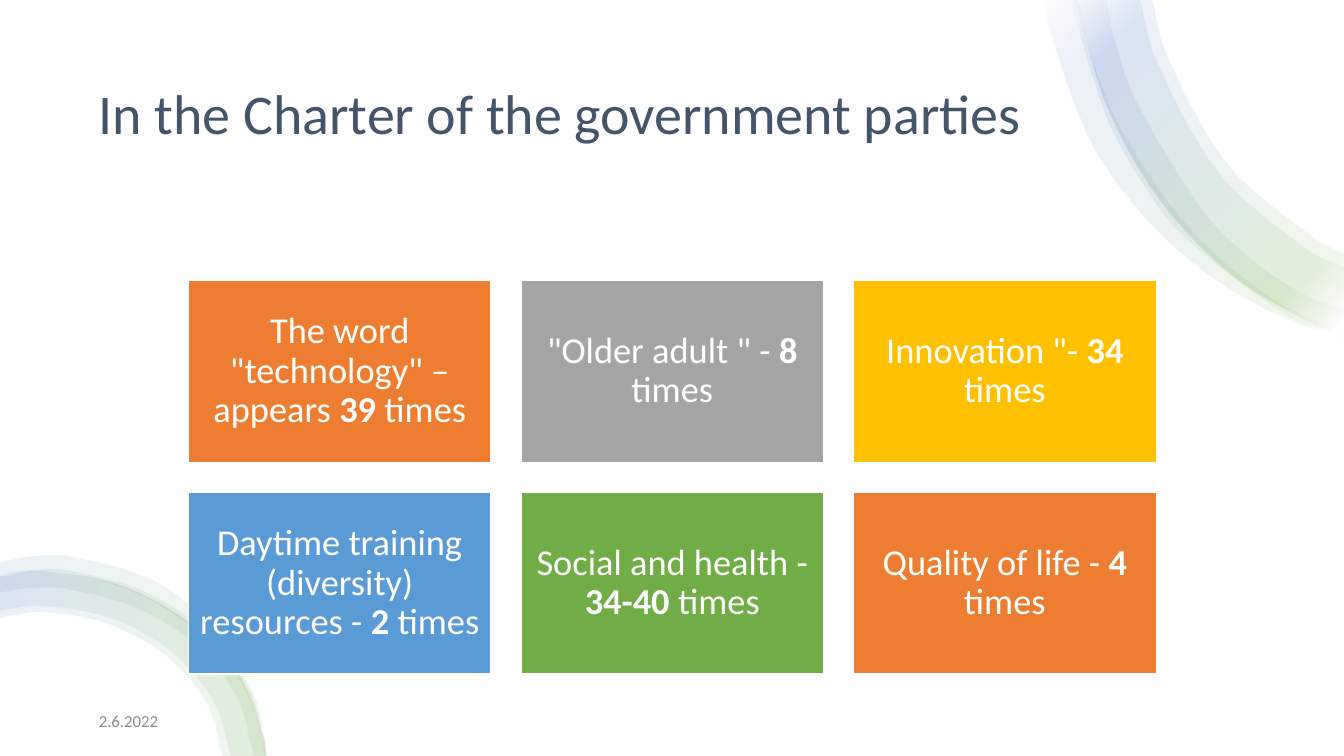
from math import dist

from lxml import etree
from pptx import Presentation
from pptx.dml.color import RGBColor
from pptx.enum.shapes import MSO_SHAPE
from pptx.enum.text import MSO_ANCHOR, PP_ALIGN
from pptx.oxml.ns import qn
from pptx.util import Cm, Pt

RECT = MSO_SHAPE.RECTANGLE
MIDDLE = MSO_ANCHOR.MIDDLE
LEFT, CENTER = PP_ALIGN.LEFT, PP_ALIGN.CENTER
FONT = "Calibri"

WHITE = RGBColor(0xFF, 0xFF, 0xFF)
NAVY = RGBColor(0x44, 0x54, 0x6A)
DIM = RGBColor(0x8C, 0x8C, 0x8C)
ORANGE = RGBColor(0xED, 0x7D, 0x31)
GRAY = RGBColor(0xA5, 0xA5, 0xA5)
GOLD = RGBColor(0xFF, 0xC0, 0x00)
SKY = RGBColor(0x5B, 0x9B, 0xD5)
GREEN = RGBColor(0x70, 0xAD, 0x47)
BLUE = RGBColor(0x44, 0x72, 0xC4)

# Gradient stops of the bands: percent and colour
STOPS = [(2, WHITE), (16, GREEN), (85, BLUE), (100, WHITE)]

# Cards: fill, words before the count, count
CARDS = [
    (ORANGE, 'The word "technology" – appears ', "39"),
    (GRAY, '"Older adult " - ', "8"),
    (GOLD, 'Innovation "- ', "34"),
    (SKY, "Daytime training (diversity) resources - ", "2"),
    (GREEN, "Social and health - ", "34-40"),
    (ORANGE, "Quality of life - ", "4"),
]

# Bands: outer and inner edge, as knots in units of 2.54 cm
TOP_EDGE = [(13.33, 3.32), (13.09, 3.24), (12.24, 2.74), (11.52, 2),
            (10.99, 1.07), (10.69, 0.04), (10.67, -0.09)]
TOP = [
    ([(13.33, 3.35), (12.82, 3.19), (12.21, 2.87), (11.65, 2.45),
      (11.16, 1.92), (10.78, 1.31), (10.41, 0.26), (10.36, -0.09)],
     [(10.68, -0.09), (10.82, 0.52), (11.06, 1.15), (11.4, 1.73),
      (11.81, 2.27), (12.3, 2.73), (12.86, 3.1), (13.33, 3.28)]),
    (TOP_EDGE,
     [(11.41, -0.09), (11.58, 0.55), (12.19, 1.64), (13.07, 2.38),
      (13.33, 2.51)]),
    ([(13.33, 3.33), (12.79, 3.14), (11.73, 2.33), (11.32, 1.79),
      (10.99, 1.19), (10.68, 0.2), (10.63, -0.09)],
     [(10.96, -0.09), (11.07, 0.44), (11.29, 1.04), (11.95, 2.11),
      (12.39, 2.55), (12.9, 2.9), (13.33, 3.08)]),
    (TOP_EDGE,
     [(11.29, -0.09), (11.47, 0.59), (12.1, 1.72), (13.01, 2.5),
      (13.33, 2.64)]),
]
LOW_EDGE = [(2.63, 7.5), (2.62, 7.35), (2.36, 6.69), (1.85, 6.16),
            (1.17, 5.8), (0.4, 5.67), (0, 5.72)]
LOW = [
    (LOW_EDGE,
     [(0, 6.13), (0.4, 6.07), (1.07, 6.19), (1.66, 6.52), (2.06, 7),
      (2.2, 7.5)]),
    (LOW_EDGE,
     [(0, 6.06), (0.4, 6.01), (1.09, 6.13), (1.7, 6.47), (2.12, 6.97),
      (2.28, 7.5)]),
    ([(2.63, 7.5), (2.47, 6.85), (2.03, 6.27), (1.42, 5.87), (0.69, 5.67),
      (0.31, 5.66), (0, 5.71)],
     [(0, 5.88), (0.33, 5.84), (0.67, 5.85), (1.34, 6.03), (1.92, 6.39),
      (2.34, 6.91), (2.51, 7.5)]),
    ([(2.64, 7.5), (2.5, 6.87), (1.96, 6.09), (1.48, 5.75), (0.71, 5.53),
      (0.31, 5.53), (0, 5.59)],
     [(0, 5.72), (0.32, 5.68), (0.69, 5.7), (1.22, 5.84), (1.71, 6.09),
      (2.25, 6.58), (2.52, 7.05), (2.62, 7.5)]),
]


def bend(knots):
    """Two control points for each step of a smooth curve."""
    ends = [knots[0], *knots, knots[-1]]
    slopes = [
        tuple((r - p) / (dist(a, b) + dist(b, c)) for p, r in zip(a, c))
        for a, b, c in zip(ends, ends[1:], ends[2:])]
    pulls = []
    for i, (a, b) in enumerate(zip(knots, knots[1:])):
        reach = dist(a, b) / 3
        pulls.append((
            tuple(v + s * reach for v, s in zip(a, slopes[i])),
            tuple(v - s * reach for v, s in zip(b, slopes[i + 1]))))
    return pulls


def add_band(slide, outer, inner, angle):
    knots = [(x * 254, y * 254) for x, y in outer + inner]
    build = slide.shapes.build_freeform(*knots[0], scale=Cm(0.01))
    build.add_line_segments(knots[1:], close=True)
    band = build.convert_to_shape()
    band.shadow.inherit = False
    band.line.fill.background()
    # Turn the lines along both edges into curves
    left = min(round(x) for x, y in knots)
    top = min(round(y) for x, y in knots)
    lines = list(band._element.iter(qn("a:lnTo")))
    for line, pair in zip(lines, bend(outer) + [None] + bend(inner)):
        if pair:
            line.tag = qn("a:cubicBezTo")
            for i, (x, y) in enumerate(pair):
                line.insert(i, etree.Element(
                    qn("a:pt"), x=str(round(x * 254) - left),
                    y=str(round(y * 254) - top)))
    # Sheer stops and direction
    band.fill.gradient()
    grad = band._element.spPr.find(qn("a:gradFill"))
    for child in list(grad):
        grad.remove(child)
    stops = etree.SubElement(grad, qn("a:gsLst"))
    for place, color in STOPS:
        stop = etree.SubElement(stops, qn("a:gs"), pos=str(place * 1000))
        tint = etree.SubElement(stop, qn("a:srgbClr"), val=str(color))
        etree.SubElement(tint, qn("a:alpha"), val="10000")
    etree.SubElement(grad, qn("a:lin"), ang=str(angle * 60000), scaled="0")


def add_box(slide, box, fill):
    shape = slide.shapes.add_shape(RECT, *map(Cm, box))
    shape.shadow.inherit = False
    shape.fill.solid()
    shape.fill.fore_color.rgb = fill
    shape.line.fill.background()
    return shape


def style(para, size, color, align, space):
    para.alignment = align
    para.line_spacing = space
    para.font.name = FONT
    para.font.size = Pt(size)
    para.font.color.rgb = color


def add_text(slide, text, box, size, color, space=1.0):
    frame = slide.shapes.add_textbox(*map(Cm, box)).text_frame
    frame.word_wrap = True
    frame.vertical_anchor = MIDDLE
    para = frame.paragraphs[0]
    para.text = text
    style(para, size, color, LEFT, space)


def add_card(slide, left, top, fill, words, count):
    card = add_box(slide, (left, top, 7.63, 4.58), fill)
    card.line.color.rgb = WHITE
    card.line.width = Pt(1)
    frame = card.text_frame
    frame.word_wrap = True
    frame.vertical_anchor = MIDDLE
    frame.margin_left = frame.margin_right = Cm(0.28)
    frame.margin_top = frame.margin_bottom = Cm(0.28)
    para = frame.paragraphs[0]
    style(para, 26, WHITE, CENTER, 0.9)
    for text in (words, count, " times"):
        run = para.add_run()
        run.text = text
        run.font.bold = text == count


def main():
    deck = Presentation()
    deck.slide_width, deck.slide_height = Cm(33.87), Cm(19.05)
    slide = deck.slides.add_slide(deck.slide_layouts[6])

    # White ground
    add_box(slide, (0, 0, 33.87, 19.05), WHITE)

    # Title, date and corner bands
    add_text(slide, "In the Charter of the government parties",
             (2.24, 1.28, 29.39, 3.3), 40, NAVY, 0.9)
    for outer, inner in TOP:
        add_band(slide, outer, inner, 225)
    add_text(slide, "2.6.2022", (2.24, 17.65, 7.62, 1.02), 12, DIM)
    for outer, inner in LOW:
        add_band(slide, outer, inner, 160)

    # Grid of cards
    for i, card in enumerate(CARDS):
        row, col = divmod(i, 3)
        add_card(slide, 4.75 + 8.38 * col, 7.07 + 5.34 * row, *card)

    deck.save("out.pptx")


if __name__ == "__main__":
    main()
